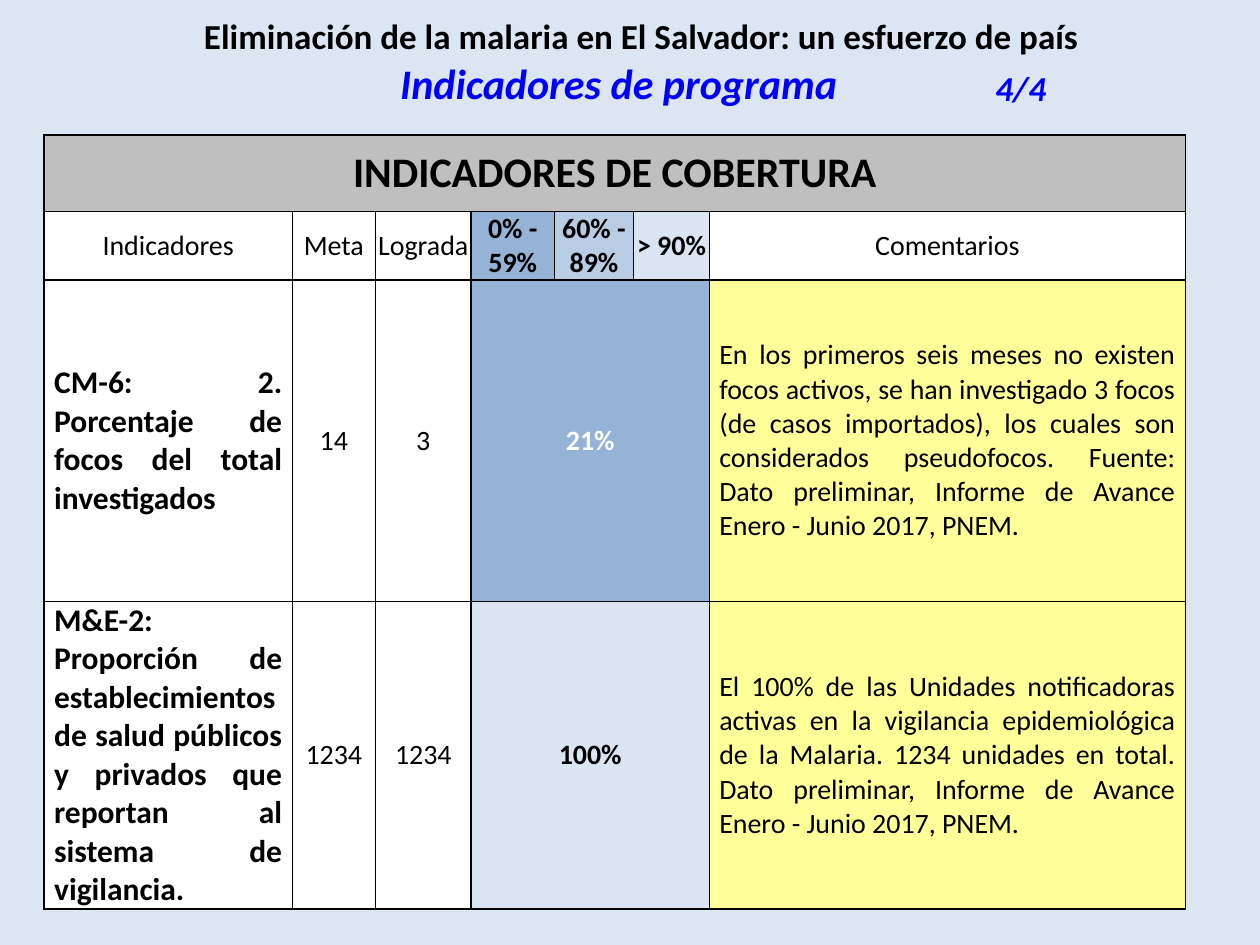
from lxml import etree
from pptx import Presentation
from pptx import util as u
from pptx.dml.color import RGBColor
from pptx.enum import text
from pptx.oxml.ns import qn

FONT = "Calibri"
BLACK, WHITE, BLUE = "000000", "FFFFFF", "0000FF"
GREY, YELLOW = "BFBFBF", "FFFF99"
LOW, MID, HIGH = "95B3D7", "B8CCE4", "DBE5F1"
CENTER, JUSTIFY, LEFT = (text.PP_ALIGN.CENTER, text.PP_ALIGN.JUSTIFY,
                         text.PP_ALIGN.LEFT)

# Content
TITLE = "Eliminación de la malaria en El Salvador: un esfuerzo de país"
SUBTITLE, PAGE = "Indicadores de programa", "4/4"
HEADING = "INDICADORES DE COBERTURA"
HEADERS = [  # label, fill, bold
    ("Indicadores", WHITE, False),
    ("Meta", WHITE, False),
    ("Lograda", WHITE, False),
    ("0% - 59%", LOW, True),
    ("60% - 89%", MID, True),
    ("> 90%", HIGH, True),
    ("Comentarios", WHITE, False),
]
INDICATORS = [  # name, target, achieved, coverage, (fill, colour), comment
    ("CM-6: 2. Porcentaje de focos del total investigados",
     "14", "3", "21%", (LOW, WHITE),
     "En los primeros seis meses no existen focos activos, se han investigado "
     "3 focos (de casos importados), los cuales son considerados pseudofocos. "
     "Fuente: Dato preliminar, Informe de Avance Enero - Junio 2017, PNEM."),
    ("M&E-2: Proporción de establecimientos de salud públicos y privados que "
     "reportan al sistema de vigilancia.",
     "1234", "1234", "100%", (HIGH, BLACK),
     "El 100% de las Unidades notificadoras activas en la vigilancia "
     "epidemiológica de la Malaria. 1234 unidades en total. Dato preliminar, "
     "Informe de Avance Enero - Junio 2017, PNEM."),
]

# Grids: left, top, column widths, row heights
TITLE_GRID = (0.62, 0.13, [1.3, 5.98, 1.66], [0.31, 0.23])
DATA_GRID = (0.35, 1.07, [1.97, 0.66, 0.76, 0.66, 0.63, 0.6, 3.78],
             [0.61, 0.48, 2.55, 1.96])


def rgb(value):
    return RGBColor.from_string(value)


def set_borders(cell, color):
    """Outline a cell, or leave it without lines when color is None."""
    props = cell._tc.get_or_add_tcPr()
    for side in ("lnL", "lnR", "lnT", "lnB"):
        line = etree.SubElement(props, qn(f"a:{side}"), w=str(u.Pt(1)))
        if color:
            fill = etree.SubElement(line, qn("a:solidFill"))
            etree.SubElement(fill, qn("a:srgbClr"), val=color)
        else:
            etree.SubElement(line, qn("a:noFill"))


def add_grid(slide, grid, border):
    left, top, cols, rows = grid
    table = slide.shapes.add_table(
        len(rows), len(cols), u.Inches(left), u.Inches(top),
        u.Inches(sum(cols)), u.Inches(sum(rows))).table
    table.first_row = table.horz_banding = False
    for col, width in zip(table.columns, cols):
        col.width = u.Inches(width)
    for row, height in zip(table.rows, rows):
        row.height = u.Inches(height)
    for cell in table.iter_cells():
        set_borders(cell, border)
        cell.fill.background()
        cell.margin_left = cell.margin_right = 0
        cell.margin_top = cell.margin_bottom = 0
    return table


def write(cell, words, size, bold=True, italic=False, color=BLACK, fill=None,
          align=CENTER, anchor=text.MSO_ANCHOR.MIDDLE, pad=0):
    cell.margin_left = cell.margin_right = u.Inches(pad)
    cell.vertical_anchor = anchor
    if fill:
        cell.fill.solid()
        cell.fill.fore_color.rgb = rgb(fill)
    p = cell.text_frame.paragraphs[0]
    p.text, p.alignment = words, align
    p.font.name, p.font.size = FONT, u.Pt(size)
    p.font.bold, p.font.italic = bold, italic
    p.font.color.rgb = rgb(color)


prs = Presentation()
prs.slide_width, prs.slide_height = u.Inches(10), u.Inches(7.5)
s = prs.slides.add_slide(prs.slide_layouts[6])
s.background.fill.solid()
s.background.fill.fore_color.rgb = rgb("DCE6F2")

# Indicator table: heading and column headers
data = add_grid(s, DATA_GRID, BLACK)
data.cell(0, 0).merge(data.cell(0, len(HEADERS) - 1))
write(data.cell(0, 0), HEADING, 24, fill=GREY)
for c, (label, fill, bold) in enumerate(HEADERS):
    write(data.cell(1, c), label, 16, bold, fill=fill)

# One row per indicator, coverage spanning its three bands
for r, (name, target, done, share, (band, ink), note) in enumerate(INDICATORS, 2):
    data.cell(r, 3).merge(data.cell(r, 5))
    write(data.cell(r, 0), name, 18, fill=WHITE, align=JUSTIFY, pad=0.08)
    for c, number in enumerate((target, done), 1):
        write(data.cell(r, c), number, 16, False, fill=WHITE, pad=0.08)
    write(data.cell(r, 3), share, 16, color=ink, fill=band, pad=0.08)
    write(data.cell(r, 6), note, 16, False, fill=YELLOW, align=JUSTIFY, pad=0.08)

# Title table
title = add_grid(s, TITLE_GRID, None)
title.cell(0, 0).merge(title.cell(0, 2))
BOTTOM = text.MSO_ANCHOR.BOTTOM
write(title.cell(0, 0), TITLE, 20, anchor=BOTTOM)
write(title.cell(1, 1), SUBTITLE, 24, italic=True, color=BLUE, anchor=BOTTOM)
write(title.cell(1, 2), PAGE, 20, italic=True, color=BLUE, align=LEFT,
      anchor=BOTTOM)

prs.save("out.pptx")
